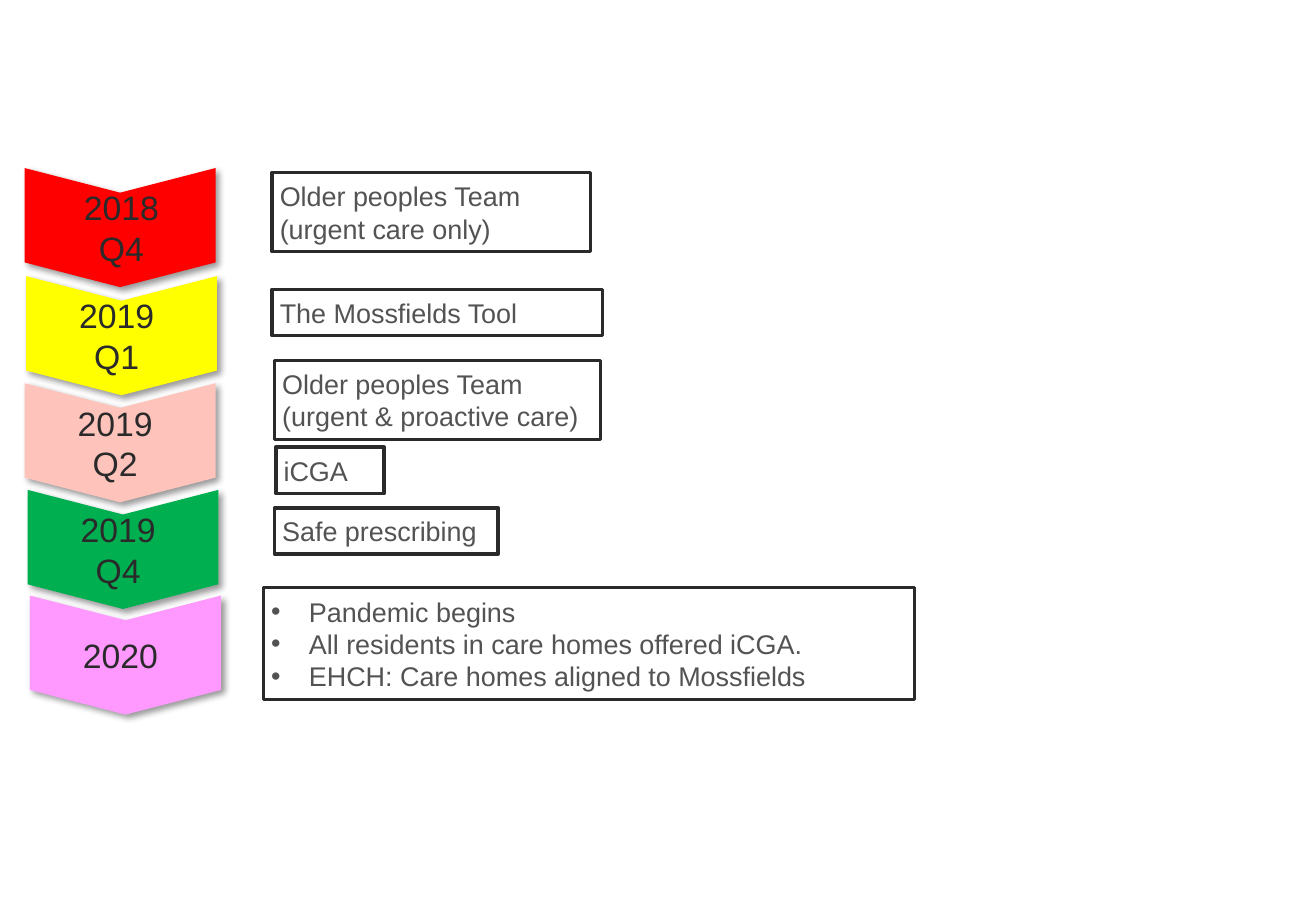
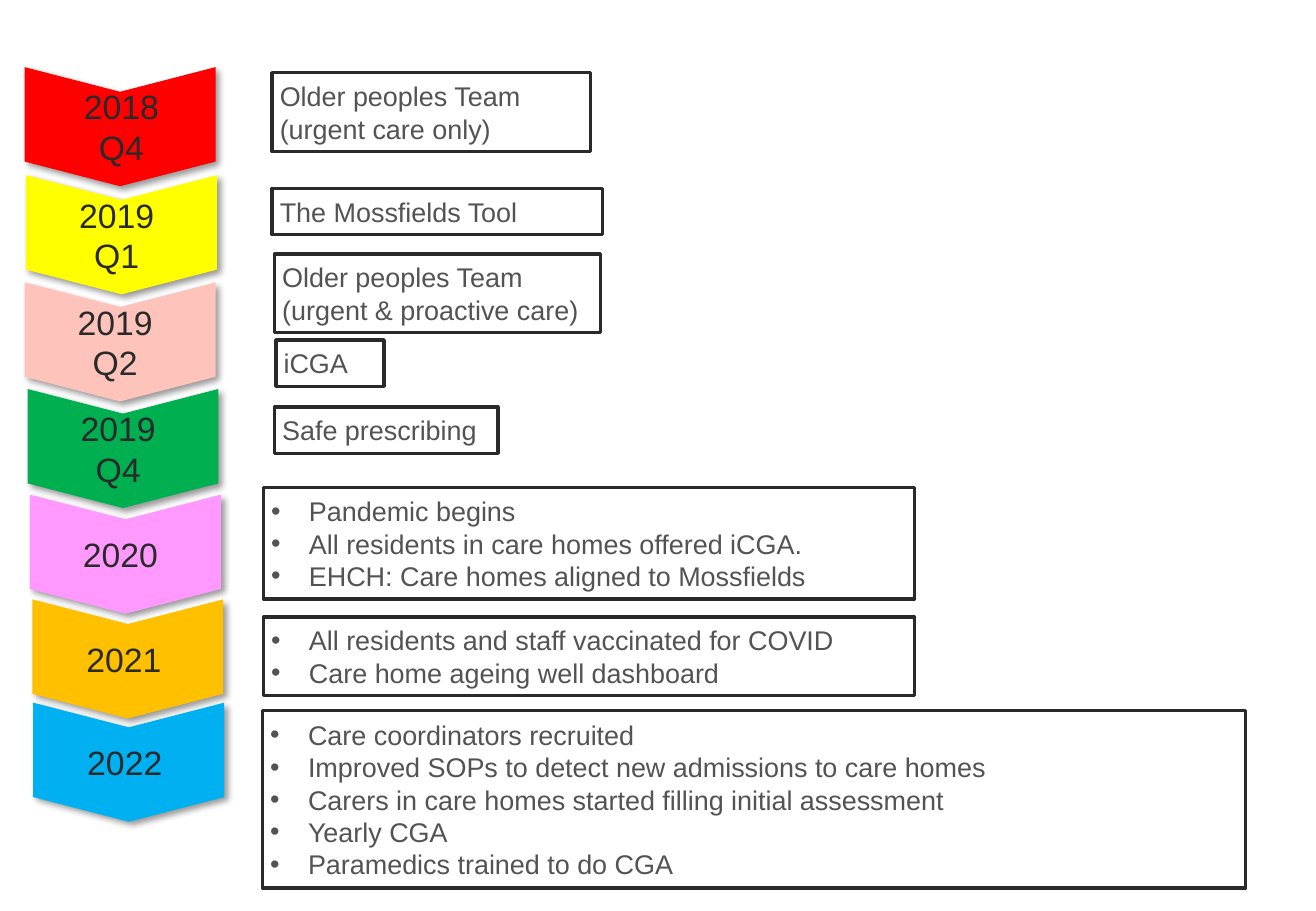
from lxml import etree
from pptx import Presentation
from pptx.dml.color import RGBColor
from pptx.enum.shapes import MSO_SHAPE
from pptx.enum.text import MSO_ANCHOR, MSO_AUTO_SIZE, PP_ALIGN
from pptx.oxml.ns import qn
from pptx.util import Cm, Pt

RECTANGLE, CHEVRON = MSO_SHAPE.RECTANGLE, MSO_SHAPE.CHEVRON
LEFT, CENTER = PP_ALIGN.LEFT, PP_ALIGN.CENTER
MIDDLE, FIT_SHAPE = MSO_ANCHOR.MIDDLE, MSO_AUTO_SIZE.SHAPE_TO_FIT_TEXT

FONT = "Arial"
WHITE, DARK, GREY = "FFFFFF", "2A2A2A", "535353"
CHEVRON_WIDTH, CHEVRON_HEIGHT = 2.49, 3.99  # before the quarter turn
LABEL_WIDTH, LABEL_HEIGHT = 3, 1.14
INSET, BULLET_INDENT = 0.16, 0.79

# label, fill, centre x, centre y, label offset
PERIODS = [
    ("2018 Q4", "FF0000", 2.51, 4.76, 0.03),
    ("2019 Q1", "FFFF00", 2.54, 7.02, -0.1),
    ("2019 Q2", "FEC4BB", 2.51, 9.26, -0.1),
    ("2019 Q4", "00B050", 2.57, 11.49, -0.1),
    ("2020", "FF99FF", 2.62, 13.7, -0.1),
    ("2021", "FFC000", 2.67, 15.89, -0.08),
    ("2022", "00B0F0", 2.69, 18.05, -0.08),
]

# left, width, height, lines
MILESTONES = [
    (5.69, 6.65, 1.65, ["Older peoples Team (urgent care only)"]),
    (5.69, 6.91, 0.97, ["The Mossfields Tool"]),
    (5.74, 6.81, 1.65, ["Older peoples Team (urgent & proactive care)"]),
    (5.77, 2.26, 0.97, ["iCGA"]),
    (5.74, 4.67, 0.97, ["Safe prescribing"]),
    (5.51, 13.61, 2.34, ["Pandemic begins",
                         "All residents in care homes offered iCGA.",
                         "EHCH: Care homes aligned to Mossfields"]),
    (5.51, 13.61, 1.65, ["All residents and staff vaccinated for COVID",
                         "Care home ageing well dashboard"]),
    (5.49, 20.55, 3.71, ["Care coordinators recruited",
                         "Improved SOPs to detect new admissions to care homes",
                         "Carers in care homes started filling initial assessment",
                         "Yearly CGA",
                         "Paramedics trained to do CGA"]),
]

# number of periods, upward shift of the chevrons, top of each milestone box
TIMELINES = [
    (5, 0, [3.61, 6.05, 7.54, 9.35, 10.62, 12.29]),
    (7, 2.11, [1.52, 3.94, 5.31, 7.11, 8.51, 10.19, 12.9, 14.86]),
]


def color(value):
    return RGBColor.from_string(value)


def write_text(shape, lines, size, font_color, align=LEFT):
    """Fill a shape with paragraphs, bulleted when there are several."""
    frame = shape.text_frame
    frame.word_wrap = True
    frame.auto_size = FIT_SHAPE
    frame.vertical_anchor = MIDDLE
    frame.margin_left = frame.margin_right = Cm(INSET)
    frame.margin_top = frame.margin_bottom = Cm(INSET)
    for index, line in enumerate(lines):
        paragraph = frame.add_paragraph() if index else frame.paragraphs[0]
        paragraph.alignment = align
        if len(lines) > 1:
            properties = paragraph._p.get_or_add_pPr()
            properties.set("marL", str(Cm(BULLET_INDENT)))
            properties.set("indent", str(-Cm(BULLET_INDENT)))
            etree.SubElement(properties, qn("a:buFont"), typeface=FONT)
            etree.SubElement(properties, qn("a:buChar"), char="•")
        run = paragraph.add_run()
        run.text = line
        run.font.name = FONT
        run.font.size = Pt(size)
        run.font.color.rgb = color(font_color)


presentation = Presentation()
presentation.slide_width, presentation.slide_height = Cm(27.51), Cm(19.05)

for period_count, shift, tops in TIMELINES:
    slide = presentation.slides.add_slide(presentation.slide_layouts[6])

    for label, fill, center_x, center_y, offset in PERIODS[:period_count]:
        center_y -= shift
        chevron = slide.shapes.add_shape(
            CHEVRON, Cm(center_x - CHEVRON_WIDTH / 2), Cm(center_y - CHEVRON_HEIGHT / 2),
            Cm(CHEVRON_WIDTH), Cm(CHEVRON_HEIGHT))
        chevron.rotation = 90
        chevron.adjustments[0] = 0.207
        chevron.fill.solid()
        chevron.fill.fore_color.rgb = color(fill)
        chevron.line.fill.background()
        chevron.shadow.inherit = False
        effects = chevron._element.spPr.find(qn("a:effectLst"))
        shadow = etree.SubElement(
            effects, qn("a:outerShdw"), blurRad=str(Pt(4)), dist=str(Pt(3)),
            dir="2700000", algn="tl", rotWithShape="0")
        shadow_color = etree.SubElement(shadow, qn("a:srgbClr"), val="000000")
        etree.SubElement(shadow_color, qn("a:alpha"), val="40000")

        label_box = slide.shapes.add_textbox(
            Cm(center_x + offset - LABEL_WIDTH / 2), Cm(center_y - LABEL_HEIGHT / 2),
            Cm(LABEL_WIDTH), Cm(LABEL_HEIGHT))
        write_text(label_box, [label], 20, DARK, align=CENTER)

    for top, (left, width, height, lines) in zip(tops, MILESTONES):
        milestone = slide.shapes.add_shape(RECTANGLE, Cm(left), Cm(top), Cm(width), Cm(height))
        milestone.shadow.inherit = False
        milestone.fill.solid()
        milestone.fill.fore_color.rgb = color(WHITE)
        milestone.line.color.rgb = color(DARK)
        milestone.line.width = Pt(2)
        write_text(milestone, lines, 16, GREY)

presentation.save("out.pptx")
